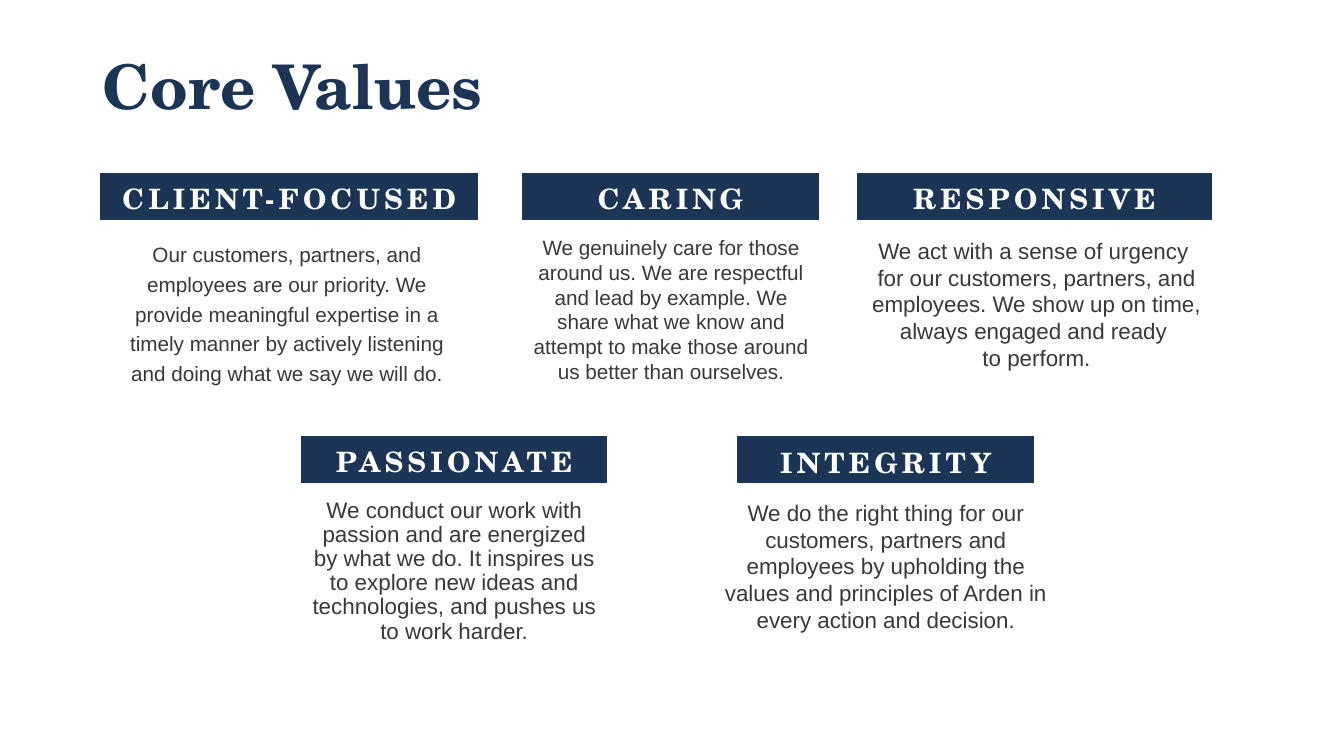
from pptx import Presentation
from pptx.dml.color import RGBColor
from pptx.enum.shapes import MSO_SHAPE as Shape
from pptx.enum.text import MSO_ANCHOR as Anchor, PP_ALIGN as Align
from pptx.util import Inches, Pt

NAVY = RGBColor(0x1C, 0x35, 0x57)
WHITE = RGBColor(0xFF, 0xFF, 0xFF)
CHARCOAL = RGBColor(0x3B, 0x38, 0x38)
HEADING_FONT = "TeX Gyre Schola"
BODY_FONT = "Arial"

TOP_ROW, BOTTOM_ROW = 1.72, 4.33
BANNER_HEIGHT = 0.46

# Name, banner (left, top, width, line spacing),
# description box (left, top, width), text size, line spacing, description
VALUES = [
    ("CLIENT-FOCUSED", (1, TOP_ROW, 3.74, 0.9), (1.15, 2.3, 3.39), 14.8, 1.2,
     "Our customers, partners, and employees are our priority. We provide "
     "meaningful expertise in a timely manner by actively listening and "
     "doing what we say we will do."),
    ("CARING", (5.18, TOP_ROW, 2.94, 0.9), (5.14, 2.28, 3.03), 14.8, 1.0,
     "We genuinely care for those around us. We are respectful and lead by "
     "example. We share what we know and attempt to make those around us "
     "better than ourselves."),
    ("RESPONSIVE", (8.5, TOP_ROW, 3.52, 0.9), (8.52, 2.3, 3.52), 16, 1.0,
     "We act with a sense of urgency \nfor our customers, partners, and "
     "employees. We show up on time, always engaged and ready \nto perform."),
    ("PASSIONATE", (2.99, BOTTOM_ROW, 3.03, 0.9), (2.99, 4.9, 3.03), 16, 0.9,
     "We conduct our work with passion and are energized by what we do. It "
     "inspires us to explore new ideas and technologies, and pushes us to "
     "work harder."),
    ("INTEGRITY", (7.32, BOTTOM_ROW, 2.93, 1.0), (7.09, 4.9, 3.39), 16, 1.0,
     "We do the right thing for our customers, partners and employees by "
     "upholding the values and principles of Arden in every action and "
     "decision."),
]


def write(frame, text, size, font, color, bold=False, align=Align.CENTER,
          line_spacing=1.0, tracking=0):
    """Fill a text frame with one paragraph; a newline is a line break."""
    frame.word_wrap = True
    paragraph = frame.paragraphs[0]
    paragraph.alignment = align
    paragraph.line_spacing = line_spacing
    for number, line in enumerate(text.split("\n")):
        if number:
            paragraph.add_line_break()
        run = paragraph.add_run()
        run.text = line
        run.font.size = Pt(size)
        run.font.name = font
        run.font.bold = bold
        run.font.color.rgb = color
        if tracking:
            run.font._element.set("spc", str(tracking * 100))


def add_title(slide, text):
    title = slide.shapes.add_textbox(
        Inches(0.92), Inches(0.16), Inches(11.5), Inches(1.45))
    title.text_frame.vertical_anchor = Anchor.MIDDLE
    write(title.text_frame, text, 44, HEADING_FONT, NAVY, bold=True,
          align=Align.LEFT, line_spacing=0.9)


def add_banner(slide, name, left, top, width, line_spacing):
    banner = slide.shapes.add_shape(
        Shape.RECTANGLE, Inches(left), Inches(top), Inches(width),
        Inches(BANNER_HEIGHT))
    banner.shadow.inherit = False
    banner.fill.solid()
    banner.fill.fore_color.rgb = NAVY
    banner.line.color.rgb = NAVY
    banner.line.width = Pt(0.75)
    frame = banner.text_frame
    frame.vertical_anchor = Anchor.BOTTOM
    frame.margin_left = frame.margin_right = Inches(0.07)
    frame.margin_top = frame.margin_bottom = Inches(0.04)
    write(frame, name, 20, HEADING_FONT, WHITE, bold=True,
          line_spacing=line_spacing, tracking=3)


def add_description(slide, text, left, top, width, size, line_spacing):
    description = slide.shapes.add_textbox(
        Inches(left), Inches(top), Inches(width), Inches(1.67))
    write(description.text_frame, text, size, BODY_FONT, CHARCOAL,
          line_spacing=line_spacing)


def main():
    deck = Presentation()
    deck.slide_width, deck.slide_height = Inches(13.33), Inches(7.5)
    slide = deck.slides.add_slide(deck.slide_layouts[6])

    # Heading
    add_title(slide, "Core Values")

    # Five values, each a banner above its description
    for name, banner, box, size, line_spacing, text in VALUES:
        add_banner(slide, name, *banner)
        add_description(slide, text, *box, size, line_spacing)

    deck.save("out.pptx")


if __name__ == "__main__":
    main()
